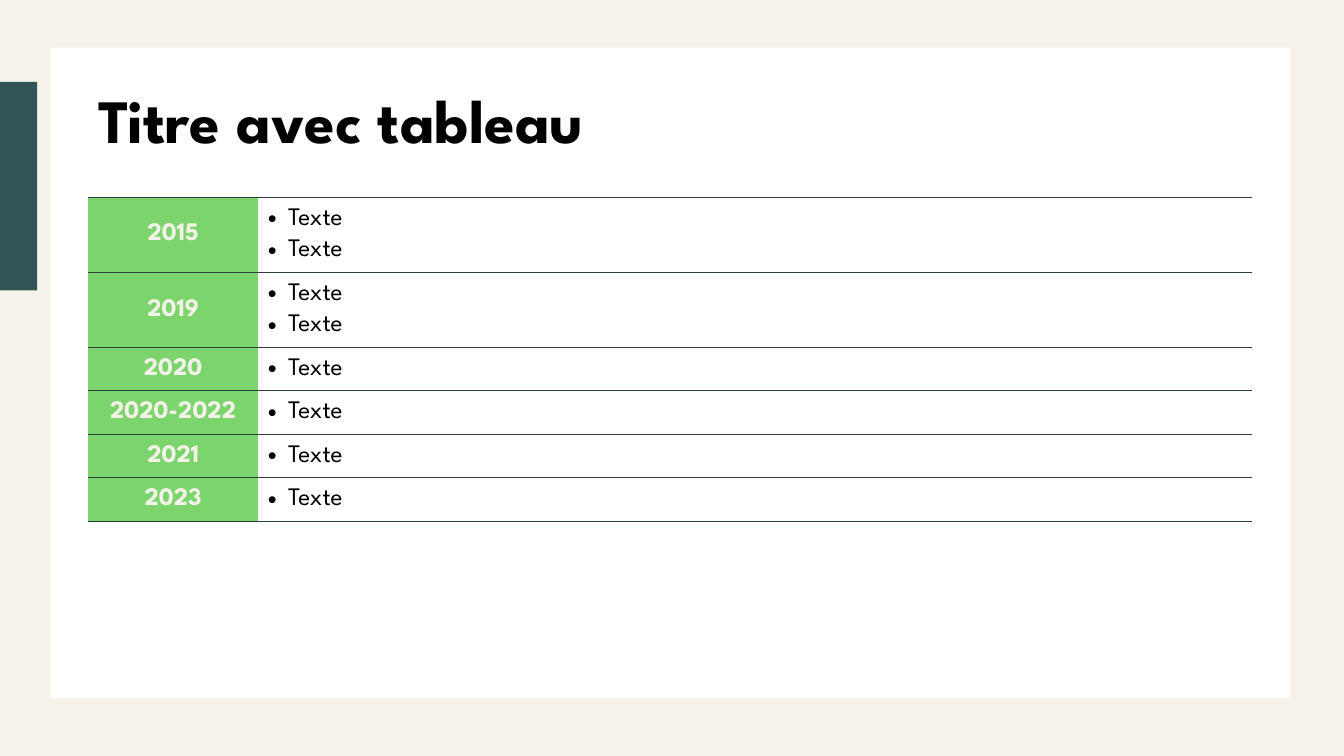
from dataclasses import dataclass

from lxml import etree
from pptx import Presentation
from pptx.dml.color import RGBColor
from pptx.enum.shapes import MSO_SHAPE
from pptx.enum.text import MSO_ANCHOR, MSO_AUTO_SIZE, PP_ALIGN
from pptx.oxml.ns import qn
from pptx.util import Pt

RECT = MSO_SHAPE.RECTANGLE
MIDDLE = MSO_ANCHOR.MIDDLE
FIXED = MSO_AUTO_SIZE.NONE
LEFT, CENTER = PP_ALIGN.LEFT, PP_ALIGN.CENTER


@dataclass(frozen=True)
class Theme:
    """Colours, font and type sizes of the slide."""
    paper: str = "F5F2EA"
    panel: str = "FFFFFF"
    accent: str = "305554"
    rule: str = "283F3E"
    year: str = "7CD56C"
    ink: str = "000000"
    font: str = "League Spartan"
    title: int = 44
    body: int = 18


THEME = Theme()
ROWS = [
    ("2015", ["Texte", "Texte"]),
    ("2019", ["Texte", "Texte"]),
    ("2020", ["Texte"]),
    ("2020-2022", ["Texte"]),
    ("2021", ["Texte"]),
    ("2023", ["Texte"]),
]


def style(para, size, color, bold):
    """Format every run of a paragraph."""
    for run in para.runs:
        font = run.font
        font.name, font.size, font.bold = THEME.font, Pt(size), bold
        font.color.rgb = RGBColor.from_string(color)


def add_block(slide, box, color):
    """Draw a plain filled rectangle in the box."""
    block = slide.shapes.add_shape(RECT, *map(Pt, box))
    block.shadow.inherit = False
    block.fill.solid()
    block.fill.fore_color.rgb = RGBColor.from_string(color)
    block.line.fill.background()


def add_title(slide, box, text):
    """Place the title in the box, in front of the blocks."""
    title = slide.shapes.title
    title.element.getparent().append(title.element)
    title.left, title.top, title.width, title.height = map(Pt, box)
    frame = title.text_frame
    frame.text = text
    frame.auto_size = FIXED
    frame.vertical_anchor = MIDDLE
    para = frame.paragraphs[0]
    para.alignment = LEFT
    para.line_spacing = 0.9
    style(para, THEME.title, THEME.ink, True)


def rule_cell(cell):
    """Give a cell rules above and below and open sides."""
    props = cell._tc.get_or_add_tcPr()
    for spot, side in enumerate(("lnL", "lnR", "lnT", "lnB")):
        line = etree.Element(qn(f"a:{side}"), w=str(Pt(1)))
        if side in ("lnT", "lnB"):
            fill = etree.SubElement(line, qn("a:solidFill"))
            etree.SubElement(fill, qn("a:srgbClr"), val=THEME.rule)
        else:
            etree.SubElement(line, qn("a:noFill"))
        props.insert(spot, line)


def set_cell(cell, text):
    """Set a cell's text, insets and rules."""
    cell.text_frame.text = text
    cell.vertical_anchor = MIDDLE
    cell.margin_left = cell.margin_right = Pt(7.2)
    cell.margin_top = cell.margin_bottom = Pt(7.2)
    rule_cell(cell)


def fill_year(cell, text):
    """Fill a green cell with a centred year."""
    set_cell(cell, text)
    cell.fill.solid()
    cell.fill.fore_color.rgb = RGBColor.from_string(THEME.year)
    para = cell.text_frame.paragraphs[0]
    para.alignment = CENTER
    style(para, THEME.body, THEME.paper, True)


def fill_list(cell, items):
    """Fill a clear cell with a bulleted list."""
    set_cell(cell, "\n".join(items))
    cell.fill.background()
    for order, para in enumerate(cell.text_frame.paragraphs):
        props = para._p.get_or_add_pPr()
        props.set("marL", str(Pt(14.4)))
        props.set("indent", str(-Pt(14.4)))
        etree.SubElement(props, qn("a:buFont"), typeface="Arial")
        etree.SubElement(props, qn("a:buChar"), char="•")
        if order:
            para.space_before = Pt(3)
        para.space_after = Pt(3)
        style(para, THEME.body, THEME.ink, False)


def add_dates(slide, box, rows):
    """Build the table of years and lists in the box."""
    left, top, width, first = box
    highs = [30.8 + 22.5 * (len(items) - 1) for _, items in rows]
    frame = slide.shapes.add_table(
        len(rows), 2, Pt(left), Pt(top), Pt(width), Pt(sum(highs)))
    table = frame.table
    table.first_row = table.horz_banding = False
    table.columns[0].width = Pt(first)
    table.columns[1].width = Pt(width - first)
    for index, (year, items) in enumerate(rows):
        table.rows[index].height = Pt(highs[index])
        fill_year(table.cell(index, 0), year)
        fill_list(table.cell(index, 1), items)


def build_slide(deck):
    """Build the slide with a title and a table."""
    slide = deck.slides.add_slide(deck.slide_layouts[5])
    back = slide.background.fill
    back.solid()
    back.fore_color.rgb = RGBColor.from_string(THEME.paper)
    add_block(slide, (0, 58.5, 26.5, 149), THEME.accent)
    add_block(slide, (36, 34, 885.6, 464.5), THEME.panel)
    add_title(slide, (63.2, 48.2, 831, 80.6), "Titre avec tableau")
    add_dates(slide, (63.2, 141, 831, 121), ROWS)


def main():
    """Make the deck and save it."""
    deck = Presentation()
    deck.slide_width, deck.slide_height = Pt(960), Pt(540)
    build_slide(deck)
    deck.save("out.pptx")


if __name__ == "__main__":
    main()
